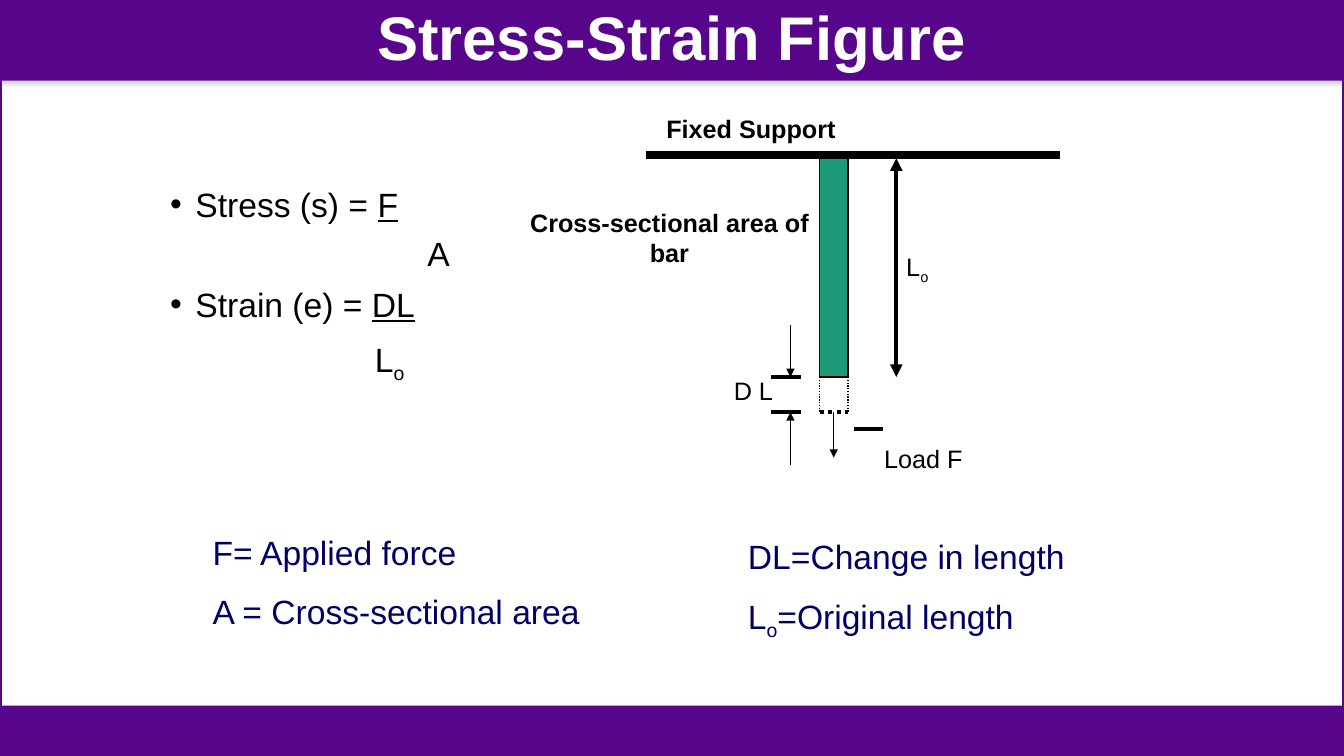
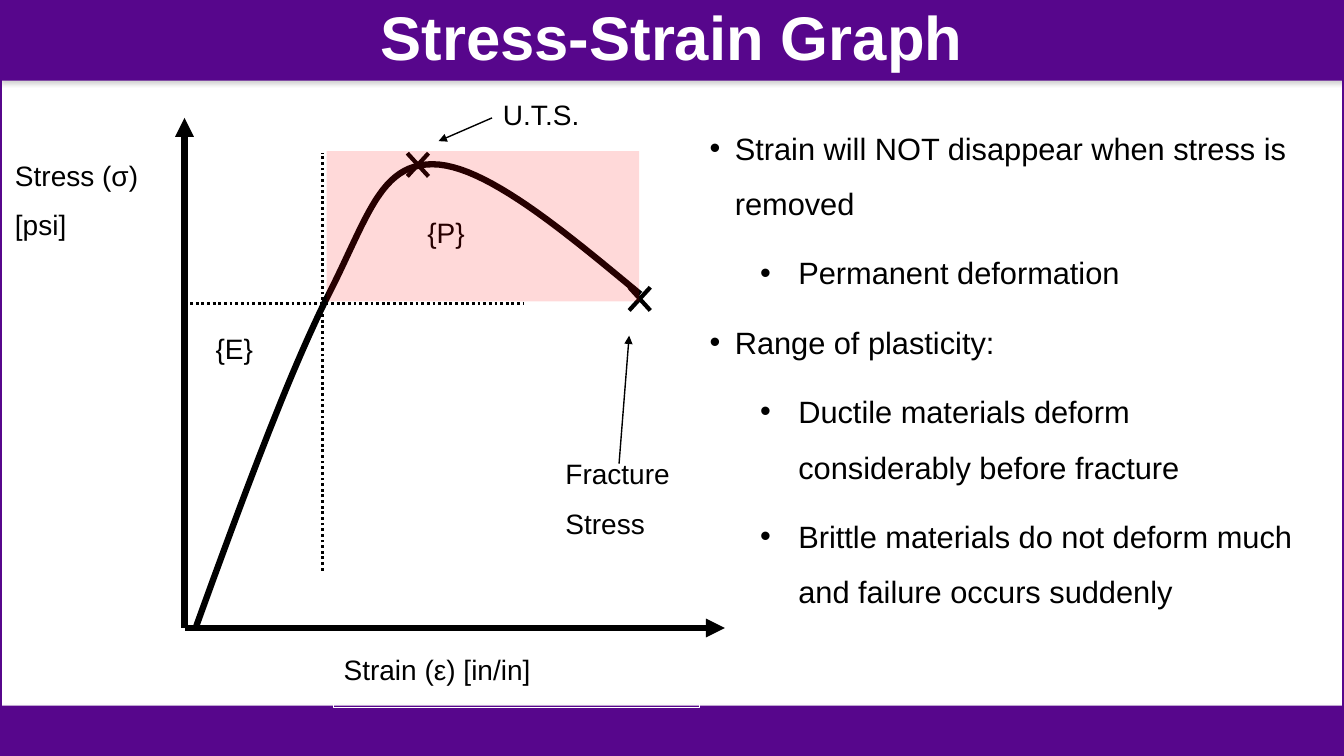
from lxml.etree import SubElement
from pptx import Presentation
from pptx.dml.color import RGBColor
from pptx.enum.dml import MSO_LINE
from pptx.enum.shapes import MSO_CONNECTOR, MSO_SHAPE
from pptx.enum.text import MSO_ANCHOR, PP_ALIGN
from pptx.oxml.ns import qn
from pptx.util import Inches, Pt

# Grid of tenth-inch cells: every length is a number of columns or rows
COLS, ROWS = 133.3, 75
HEAD_ROWS, FOOT_ROWS = 8, 5
FONT = "Arial"
COLORS = {
    "purple": "57068C",
    "white": "FFFFFF",
    "black": "000000",
    "navy": "000066",
    "green": "1D9A78",
    "red": "FF0000",
    "shadow": "808080",
}


def cell(n):
    return Inches(n / 10)


def rgb(name):
    return RGBColor.from_string(COLORS[name])


# Text
def para(*runs, **fmt):
    """A paragraph: runs are strings or (string, "sub" | "underline")."""
    return runs, fmt


def add_run(p, content, size, color, bold):
    s, mark = (content, None) if isinstance(content, str) else content
    r = p.add_run()
    r.text = s
    r.font.name, r.font.size, r.font.bold = FONT, Pt(size), bold
    r.font.color.rgb = rgb(color)
    if mark == "underline":
        r.font.underline = True
    elif mark == "sub":
        r._r.get_or_add_rPr().set("baseline", "-25000")


def format_para(p, left=0, hang=0, spacing=1.0, before=0, align=PP_ALIGN.LEFT):
    pPr = p._p.get_or_add_pPr()
    pPr.set("marL", str(cell(left)))
    pPr.set("indent", str(-cell(hang)))
    if hang:
        SubElement(pPr, qn("a:buFont")).set("typeface", FONT)
        SubElement(pPr, qn("a:buChar")).set("char", "•")
    p.line_spacing, p.space_before, p.alignment = spacing, Pt(before), align


def add_text(s, box, paras, size=18, color="black", bold=False,
             anchor=MSO_ANCHOR.TOP, **fmt):
    sp = s.shapes.add_textbox(*map(cell, box))
    tf = sp.text_frame
    tf.word_wrap, tf.vertical_anchor = True, anchor
    for i, item in enumerate(paras):
        runs, own = para(item) if isinstance(item, str) else item
        p = tf.paragraphs[0] if i == 0 else tf.add_paragraph()
        settings = {**fmt, **own}
        if i == 0:
            settings["before"] = 0
        format_para(p, **settings)
        for content in runs:
            add_run(p, content, size, color, bold)
    return sp


# Shapes and lines
def add_rect(s, box, fill=None, line=None, width=1.0, alpha=None):
    sp = s.shapes.add_shape(MSO_SHAPE.RECTANGLE, *map(cell, box))
    sp.shadow.inherit = False
    if fill:
        sp.fill.solid()
        sp.fill.fore_color.rgb = rgb(fill)
    else:
        sp.fill.background()
    if line:
        sp.line.color.rgb, sp.line.width = rgb(line), Pt(width)
    else:
        sp.line.fill.background()
    if alpha:
        clr = sp._element.spPr.find(f"{qn('a:solidFill')}/{qn('a:srgbClr')}")
        SubElement(clr, qn("a:alpha")).set("val", str(alpha * 1000))
    return sp


def add_line(s, start, end, width=1.0, arrows="", dotted=False):
    """arrows names the arrowed ends: "headEnd" at start, "tailEnd" at end."""
    ln = s.shapes.add_connector(MSO_CONNECTOR.STRAIGHT,
                                *map(cell, (*start, *end)))
    ln.line.color.rgb, ln.line.width = rgb("black"), Pt(width)
    if dotted:
        ln.line.dash_style = MSO_LINE.ROUND_DOT
    outline = ln.line._get_or_add_ln()
    for name in arrows.split():
        SubElement(outline, qn(f"a:{name}")).set("type", "triangle")
    SubElement(ln._element.spPr, qn("a:effectLst"))


def add_cross(s, x, y, half_w=1.05, half_h=1.15):
    for sign in (1, -1):
        add_line(s, (x - half_w, y - sign * half_h),
                 (x + half_w, y + sign * half_h), 3)


def bezier(p0, p1, p2, p3, steps=24):
    for i in range(1, steps + 1):
        t = i / steps
        u = 1 - t
        yield tuple(cell(u**3 * a + 3 * u * u * t * b + 3 * u * t * t * c + t**3 * d)
                    for a, b, c, d in zip(p0, p1, p2, p3))


def add_curve(s, start, segments, width):
    fb = s.shapes.build_freeform(*map(cell, start))
    for seg in segments:
        fb.add_line_segments(list(bezier(start, *seg)), close=False)
        start = seg[-1]
    sp = fb.convert_to_shape()
    sp.shadow.inherit = False
    sp.fill.background()
    sp.line.color.rgb, sp.line.width = rgb("black"), Pt(width)


# Shared frame
def add_band(s, top, rows):
    sp = add_rect(s, (0, top, COLS, rows), "purple")
    effects = sp._element.spPr.find(qn("a:effectLst"))
    shadow = SubElement(effects, qn("a:outerShdw"), blurRad=str(Pt(3.1)),
                        dist=str(Pt(1.8)), dir="5400000", rotWithShape="0")
    clr = SubElement(shadow, qn("a:srgbClr"), val=COLORS["shadow"])
    SubElement(clr, qn("a:alpha")).set("val", "35000")


def new_slide(prs, title):
    s = prs.slides.add_slide(prs.slide_layouts[6])
    add_band(s, 0, HEAD_ROWS)
    add_rect(s, (0, 0, COLS, ROWS), line="purple", width=2.25)
    add_band(s, ROWS - FOOT_ROWS, FOOT_ROWS)
    add_text(s, (0, 0, COLS, HEAD_ROWS), [title], size=44, color="white",
             bold=True, anchor=MSO_ANCHOR.MIDDLE, spacing=0.9,
             align=PP_ALIGN.CENTER)
    return s


# Slide 1: bar under load
def add_bar_diagram(s):
    left, top, width, length, stretch = 81.3, 15.7, 2.8, 21.7, 3.5
    right, bottom = left + width, top + length
    end = bottom + stretch
    mid = left + width / 2
    add_line(s, (64.1, 15.4), (105.1, 15.4), 6)
    add_line(s, (88.9, top), (88.9, bottom), 3, "headEnd tailEnd")
    add_line(s, (84.7, 42.6), (87.6, 42.6), 3)

    # Elongation gauge
    for level, tail in ((bottom, bottom - 5.2), (end, end + 5.2)):
        add_line(s, (76.5, level), (79.4, level), 3)
        add_line(s, (78.4, tail), (78.4, level), 1, "tailEnd")

    # Stretched end, load and bar
    add_line(s, (left, end), (right, end), 3, dotted=True)
    for x in (left, right):
        add_line(s, (x, bottom), (x, end), 1, dotted=True)
    add_line(s, (mid, end), (mid, 45.4), 1, "tailEnd")
    add_rect(s, (left, top, width, length), "green", "black")

    # Labels
    add_text(s, (88.9, 24.4, 6.7, 4.2), [para("L", ("o", "sub"))])
    add_text(s, (71.8, 36.7, 6.7, 4.2), ["D L"])
    add_text(s, (86.7, 43.5, 15.2, 4.2), ["Load F"])
    add_text(s, (50.2, 20.1, 32.4, 7.3), ["Cross-sectional area of bar"],
             bold=True, align=PP_ALIGN.CENTER)
    add_text(s, (65.1, 10.7, 23.8, 4.2), ["Fixed Support"], bold=True)


def figure_slide(prs):
    s = new_slide(prs, "Stress-Strain Figure")
    item = {"left": 7.5, "hang": 2.5}
    add_text(s, (10.9, 18.7, 44.7, 19.7), [
        para("Stress (s) = ", ("F", "underline"), spacing=0.75, **item),
        para("A", left=30.5, spacing=0.75),
        para("Strain (e) = ", ("DL", "underline"), **item),
        para("L", ("o", "sub"), left=25.3),
    ], size=24, spacing=0.8, before=13.5)
    add_bar_diagram(s)
    legend = {"size": 24, "color": "navy", "before": 13.5}
    add_text(s, (73.2, 52.7, 40, 11.1), [
        "DL=Change in length",
        para("L", ("o", "sub"), "=Original length")], **legend)
    add_text(s, (20.1, 52.3, 51.5, 11.1),
             ["F= Applied force", "A = Cross-sectional area"], **legend)


# Slide 2: stress-strain curve
def add_graph(s):
    origin, yield_x, yield_y = (18.3, 62.3), 32, 30.1
    add_curve(s, (19.4, 62.3), [
        ((24, 49.6), (28.7, 36.9), (32.6, 29.2)),
        ((36.5, 21.5), (37.7, 16.3), (42.9, 16.3)),
        ((48, 16.3), (55.8, 22.8), (63.5, 29.2)),
    ], 4.5)
    for tip in ((71.9, origin[1]), (origin[0], 11.7)):
        add_line(s, origin, tip, 4.5, "tailEnd")
    add_line(s, (origin[0], yield_y), (51.9, yield_y), 2, dotted=True)
    add_line(s, (yield_x, 56.6), (yield_x, 15.2), 2, dotted=True)

    # Labels
    strain = add_text(s, (33.1, 64.2, 36.3, 6), ["Strain (ε) [in/in]"], size=20)
    strain.line.color.rgb, strain.line.width = rgb("white"), Pt(1)
    for box, lines in (
        ((0.5, 15.2, 17.8, 12.9), ["Stress (σ)", "[psi]"]),
        ((55.1, 44.8, 15.6, 12.9), ["Fracture", "Stress"]),
        ((48.9, 9.2, 12.5, 6), ["U.T.S."]),
        ((41.4, 20.9, 7.2, 6), ["{P}"]),
        ((20.4, 32.4, 7.2, 6), ["{E}"]),
    ):
        add_text(s, box, lines, size=20, before=11.5)

    # Marked points and their pointers
    add_cross(s, 41.45, 16.35)
    add_cross(s, 63.45, 29.65)
    add_line(s, (61.4, 46), (62.4, 33.3), 1, "tailEnd")
    add_line(s, (48.8, 11.7), (43.5, 14), 1, "tailEnd")


def graph_slide(prs):
    s = new_slide(prs, "Stress-Strain Graph")
    add_graph(s)
    main_item = {"left": 2.5, "hang": 2.5}
    sub_item = {"left": 8.8, "hang": 3.8}
    add_text(s, (69.4, 10.5, 61, 56.3), [
        para("Strain will NOT disappear when stress is removed", **main_item),
        para("Permanent deformation", **sub_item),
        para("Range of plasticity:", **main_item),
        para("Ductile materials deform considerably before fracture", **sub_item),
        para("Brittle materials do not deform much and failure occurs suddenly",
             **sub_item),
    ], size=22, spacing=1.5, before=10)
    # Plastic range
    add_rect(s, (32.4, 15, 31, 14.9), "red", alpha=15)


def main():
    prs = Presentation()
    prs.slide_width, prs.slide_height = cell(COLS), cell(ROWS)
    figure_slide(prs)
    graph_slide(prs)
    prs.save("out.pptx")


if __name__ == "__main__":
    main()
